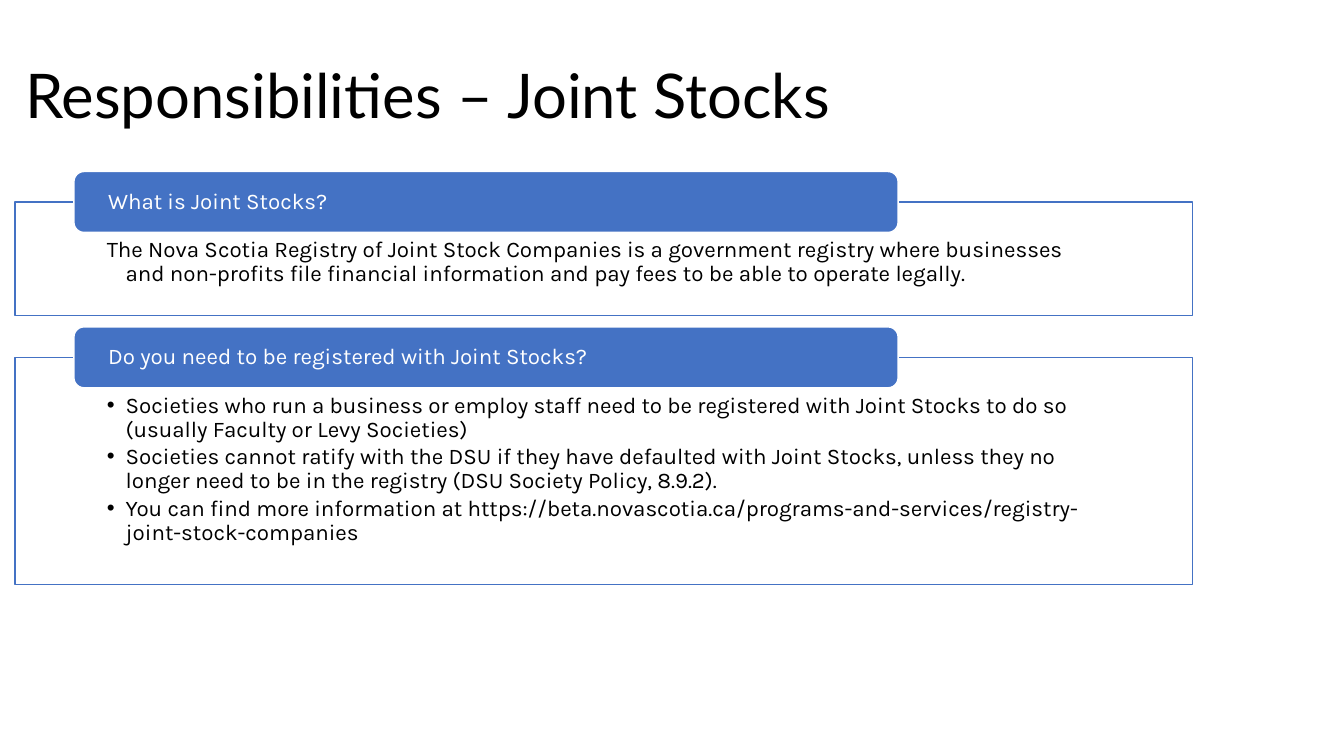
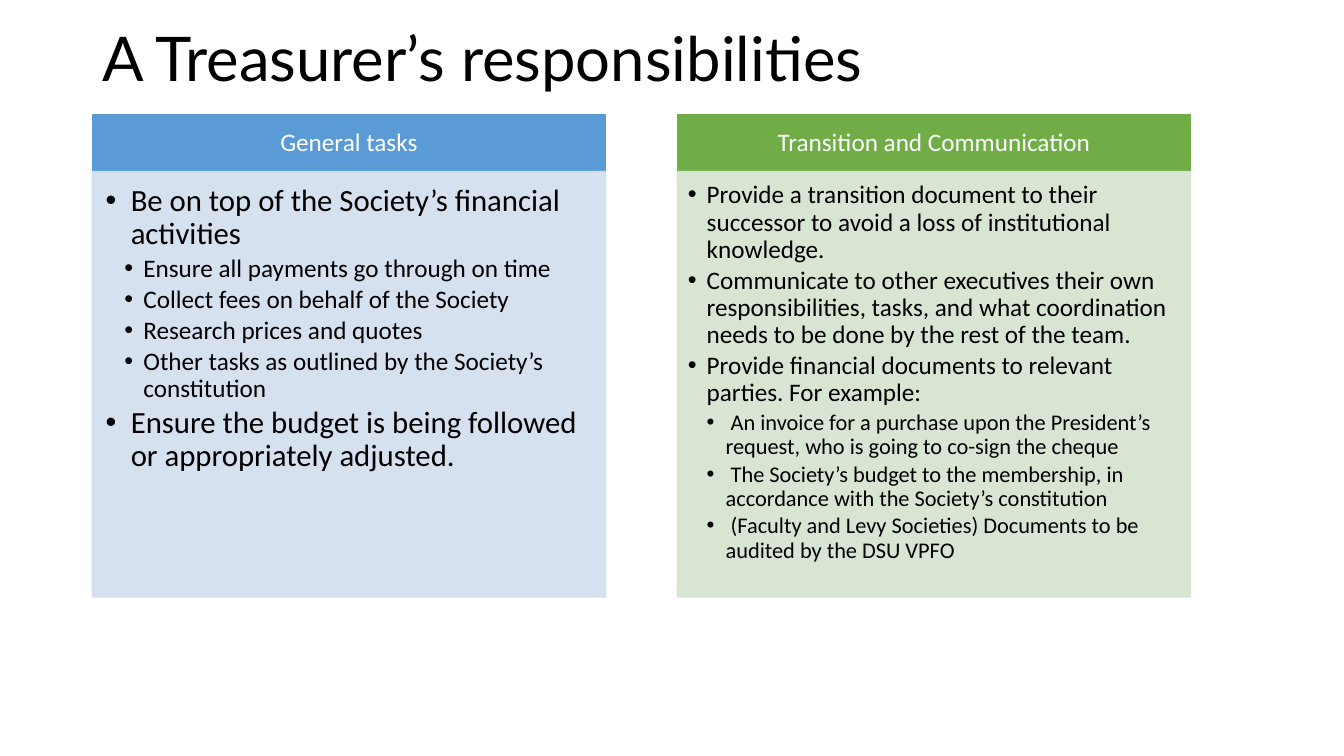
from dataclasses import dataclass

from lxml import etree
from pptx import Presentation
from pptx.dml.color import RGBColor
from pptx.enum import shapes, text
from pptx.oxml import ns
from pptx.util import Pt


@dataclass(frozen=True)
class Theme:
    black: str = "000000"
    white: str = "FFFFFF"
    accent: str = "4472C4"
    blue: str = "5B9BD5"
    blue_tint: str = "D2DEEF"
    green: str = "70AD47"
    green_tint: str = "D5E3CF"
    title_font: str = "Lato"
    panel_font: str = "Karla"
    column_font: str = "Calibri"
    title_size: int = 44
    large: int = 22
    medium: int = 18
    small: int = 16
    line_spacing: float = 0.9
    space_after: float = 0.15  # share of the type size
    line_width: int = 1
    hang: float = 13.5


THEME = Theme()


@dataclass(frozen=True)
class Item:
    words: str
    size: int = THEME.small
    indent: float = THEME.hang
    hang: float = THEME.hang
    bullet: bool = True


def main_task(words):
    return Item(words, THEME.large, 18, 18)


def sub_task(words):
    return Item(words, THEME.medium, 2 * THEME.hang)


def duty(words):
    return Item(words, THEME.medium)


def example(words):
    return Item(words, THEME.small, 2 * THEME.hang)


# Shared parts
def add_block(page, box, fill, line, kind=shapes.MSO_SHAPE.RECTANGLE, opacity=100):
    block = page.shapes.add_shape(kind, *map(Pt, box))
    block.shadow.inherit = False
    block.fill.solid()
    block.fill.fore_color.rgb = RGBColor.from_string(fill)
    block.line.color.rgb = RGBColor.from_string(line)
    block.line.width = Pt(THEME.line_width)
    if opacity < 100:
        for color in block.element.spPr.iter(ns.qn("a:srgbClr")):
            etree.SubElement(color, ns.qn("a:alpha"), val=str(opacity * 1000))
    return block


def set_frame(shape, insets, anchor):
    frame = shape.text_frame
    frame.word_wrap = True
    frame.vertical_anchor = anchor
    (frame.margin_left, frame.margin_top,
     frame.margin_right, frame.margin_bottom) = map(Pt, insets)
    return frame


def style_para(para, words, font, size, color, align=text.PP_ALIGN.LEFT):
    para.text = words
    para.alignment = align
    para.line_spacing = THEME.line_spacing
    para.font.name = font
    para.font.size = Pt(size)
    para.font.color.rgb = RGBColor.from_string(color)


def write_heading(shape, words, font, size, color, insets, align=text.PP_ALIGN.LEFT):
    frame = set_frame(shape, insets, text.MSO_ANCHOR.MIDDLE)
    style_para(frame.paragraphs[0], words, font, size, color, align)


def write_items(shape, items, font, insets):
    frame = set_frame(shape, insets, text.MSO_ANCHOR.TOP)
    for index, item in enumerate(items):
        para = frame.add_paragraph() if index else frame.paragraphs[0]
        props = para._p.get_or_add_pPr()
        props.set("marL", str(Pt(item.indent)))
        props.set("indent", str(-Pt(item.hang)))
        if item.bullet:
            etree.SubElement(props, ns.qn("a:buFont"), typeface="Arial")
            etree.SubElement(props, ns.qn("a:buChar"), char="•")
        else:
            etree.SubElement(props, ns.qn("a:buNone"))
        style_para(para, item.words, font, item.size, THEME.black)
        para.space_after = Pt(THEME.space_after * item.size)


def add_page(deck, title, left, top):
    page = deck.slides.add_slide(deck.slide_layouts[6])
    title_box = page.shapes.add_textbox(*map(Pt, (left, top, 785, 104.4)))
    write_heading(title_box, title, THEME.title_font, THEME.title_size,
                  THEME.black, (7.2, 3.6, 7.2, 3.6))
    return page


# Outlined panel with a rounded tab on its top edge
def add_tabbed_panel(page, box, heading, items):
    left, top, width, height = box
    tab_height = 43.5
    panel_top = top + tab_height / 2
    panel = add_block(page, (left, panel_top, width, top + height - panel_top),
                      THEME.white, THEME.accent)
    write_items(panel, items, THEME.panel_font, (65.5, 26, 65.5, 8.5))
    tab = add_block(page, (left + 0.05 * width, top, 0.7 * width, tab_height),
                    THEME.accent, THEME.white, shapes.MSO_SHAPE.ROUNDED_RECTANGLE)
    write_heading(tab, heading, THEME.panel_font, THEME.small, THEME.white,
                  (22.3, 0, 22.3, 0))


# Coloured header above a tinted list
def add_task_column(page, box, heading, items, color, tint, pad):
    left, top, width, height = box
    header_height = 40.5
    header = add_block(page, (left, top, width, header_height), color, color)
    write_heading(header, heading, THEME.column_font, THEME.medium, THEME.white,
                  (10, 5.8, 10, 5.8), text.PP_ALIGN.CENTER)
    body = add_block(page, (left, top + header_height, width, height - header_height),
                     tint, tint, opacity=90)
    write_items(body, items, THEME.column_font, (pad, pad, pad * 4 / 3, pad * 1.5))


def build_joint_stocks(deck):
    page = add_page(deck, "Responsibilities – Joint Stocks", 10.8, 18)
    panels = [
        ("What is Joint Stocks?", 103, [
            Item("The Nova Scotia Registry of Joint Stock Companies is a government "
                 "registry where businesses and non-profits file financial information "
                 "and pay fees to be able to operate legally.", bullet=False),
        ]),
        ("Do you need to be registered with Joint Stocks?", 184, [
            Item("Societies who run a business or employ staff need to be registered "
                 "with Joint Stocks to do so (usually Faculty or Levy Societies)"),
            Item("Societies cannot ratify with the DSU if they have defaulted with Joint "
                 "Stocks, unless they no longer need to be in the registry "
                 "(DSU Society Policy, 8.9.2)."),
            Item("You can find more information at https://beta.novascotia.ca/"
                 "programs-and-services/registry-joint-stock-companies"),
        ]),
    ]
    top, gap = 122.5, 8
    for heading, height, items in panels:
        add_tabbed_panel(page, (10.8, top, 841, height), heading, items)
        top += height + gap


def build_treasurer(deck):
    left, top, width, height, gap = 66, 82, 366.5, 344.5, 51.3
    page = add_page(deck, "A Treasurer’s responsibilities", left, -8.6)
    columns = [
        ("General tasks", [
            main_task("Be on top of the Society’s financial activities"),
            sub_task("Ensure all payments go through on time"),
            sub_task("Collect fees on behalf of the Society"),
            sub_task("Research prices and quotes"),
            sub_task("Other tasks as outlined by the Society’s constitution"),
            main_task("Ensure the budget is being followed or appropriately adjusted."),
        ], THEME.blue, THEME.blue_tint, 9.4),
        ("Transition and Communication", [
            duty("Provide a transition document to their successor to avoid a loss of "
                 "institutional knowledge."),
            duty("Communicate to other executives their own responsibilities, tasks, and "
                 "what coordination needs to be done by the rest of the team."),
            duty("Provide financial documents to relevant parties. For example:"),
            example(" An invoice for a purchase upon the President’s request, who is "
                    "going to co-sign the cheque"),
            example(" The Society’s budget to the membership, in accordance with the "
                    "Society’s constitution"),
            example(" (Faculty and Levy Societies) Documents to be audited by the DSU VPFO"),
        ], THEME.green, THEME.green_tint, 7.5),
    ]
    for index, column in enumerate(columns):
        add_task_column(page, (left + index * (width + gap), top, width, height), *column)


def main():
    deck = Presentation()
    deck.slide_width, deck.slide_height = Pt(960), Pt(540)
    build_joint_stocks(deck)
    build_treasurer(deck)
    deck.save("out.pptx")


if __name__ == "__main__":
    main()
